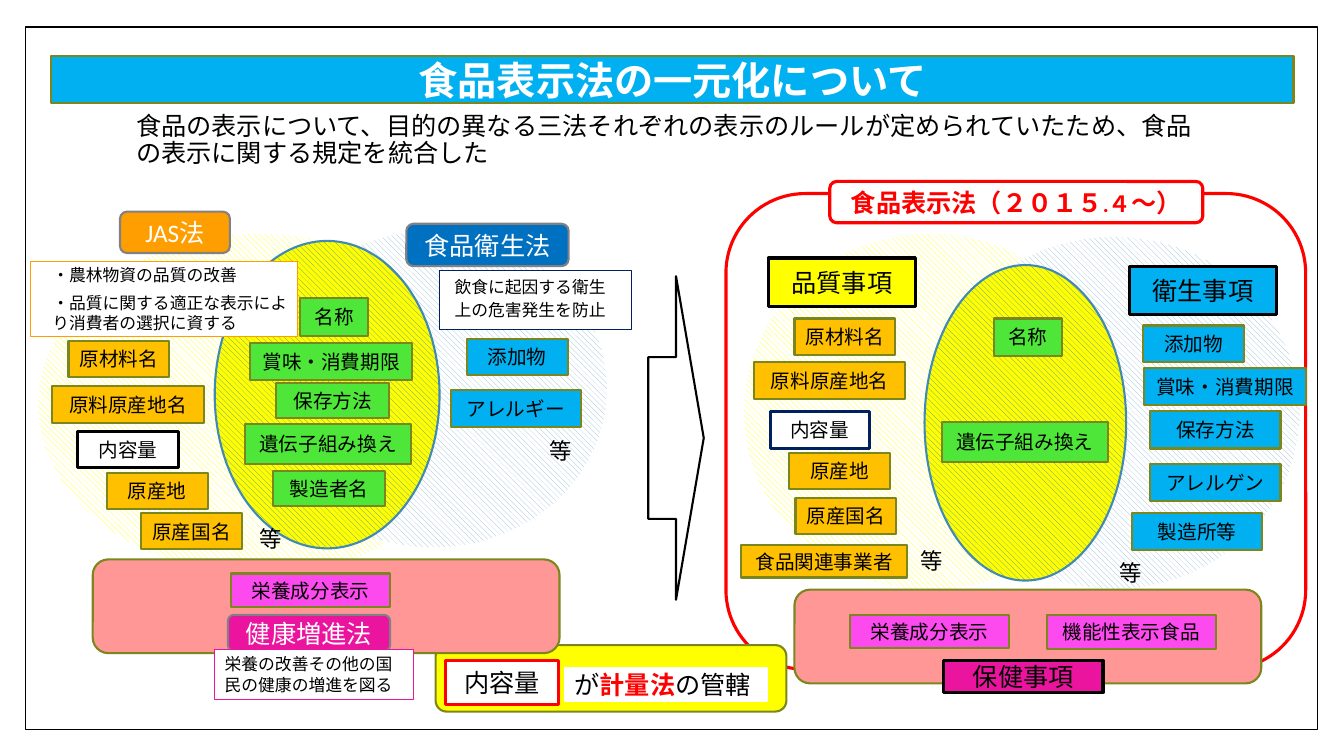
from dataclasses import dataclass

from pptx import Presentation
from pptx.dml.color import RGBColor
from pptx.enum.dml import MSO_PATTERN
from pptx.enum.shapes import MSO_SHAPE as Kind
from pptx.enum.text import MSO_ANCHOR as Anchor, MSO_AUTO_SIZE as AutoSize, PP_ALIGN as Align
from pptx.util import Emu, Pt

PX = 9144


@dataclass(frozen=True)
class Theme:
    font: str = "Calibri"
    white: str = "FFFFFF"
    black: str = "000000"
    red: str = "FF0000"
    yellow: str = "FFFF00"
    sky: str = "00B0F0"
    blue: str = "0070C0"
    navy: str = "002060"
    orange: str = "FE9E00"
    amber: str = "FFC000"
    green: str = "4EE739"
    pink: str = "FC4AEF"
    magenta: str = "EA149E"
    salmon: str = "FF9797"
    olive: str = "7B871D"
    gray: str = "818183"
    teal: str = "418AB3"
    pale_blue: str = "8ABAD4"
    banner_size: int = 28
    heading_size: int = 18
    etc_size: int = 16
    item_size: int = 14
    note_size: int = 12


THEME = Theme()


def color(value):
    return RGBColor.from_string(value)


def place(box):
    return [Emu(length * PX) for length in box]


def style_font(font, size, text_color, bold=False):
    font.name = THEME.font
    font.size = Pt(size)
    font.color.rgb = color(text_color)
    font.bold = bold


def add_box(slide, box, fill=None, line=None, width=1.5, kind=Kind.RECTANGLE):
    shape = slide.shapes.add_shape(kind, *place(box))
    shape.shadow.inherit = False
    if fill:
        shape.fill.solid()
        shape.fill.fore_color.rgb = color(fill)
    else:
        shape.fill.background()
    if line:
        shape.line.color.rgb = color(line)
        shape.line.width = Pt(width)
    else:
        shape.line.fill.background()
    return shape


def add_panel(slide, box, fill, line=THEME.olive, width=1.5):
    return add_box(slide, box, fill, line, width, Kind.ROUNDED_RECTANGLE)


def add_hatched_ellipse(slide, box, stripe, ground=THEME.white, line=None):
    shape = add_box(slide, box, line=line, kind=Kind.OVAL)
    shape.fill.patterned()
    shape.fill.pattern = MSO_PATTERN.WIDE_DOWNWARD_DIAGONAL
    shape.fill.fore_color.rgb = color(stripe)
    shape.fill.back_color.rgb = color(ground)


def write(shape, text, size, text_color=THEME.black, bold=False, align=Align.CENTER):
    frame = shape.text_frame
    frame.word_wrap = True
    frame.vertical_anchor = Anchor.MIDDLE
    paragraph = frame.paragraphs[0]
    paragraph.text = text
    paragraph.alignment = align
    style_font(paragraph.font, size, text_color, bold)
    return paragraph


def write_runs(shape, runs, align=Align.CENTER):
    paragraph = write(shape, "", THEME.heading_size, align=align)
    for text, size, text_color, bold in runs:
        run = paragraph.add_run()
        run.text = text
        style_font(run.font, size, text_color, bold)


def add_law(slide, text, box, fill):
    write(add_panel(slide, box, fill, THEME.gray), text, THEME.heading_size, THEME.white)


def add_category(slide, text, box, fill, line=THEME.black):
    write(add_box(slide, box, fill, line, 2.25), text, THEME.heading_size)


def add_items(slide, fill, items, line=THEME.olive, width=1.5):
    for text, *box in items:
        write(add_box(slide, box, fill, line, width), text, THEME.item_size)


def add_note(slide, lines, box, line, anchor=Anchor.TOP, indent=0, before=0, spacing=1.0):
    shape = add_box(slide, box, THEME.white, line, 0.75)
    frame = shape.text_frame
    for index, text in enumerate(lines):
        if index:
            paragraph = frame.add_paragraph()
            paragraph.text = text
            paragraph.alignment = Align.LEFT
            style_font(paragraph.font, THEME.note_size, THEME.black)
        else:
            paragraph = write(shape, text, THEME.note_size, align=Align.LEFT)
        paragraph.space_before = Pt(before)
        paragraph.line_spacing = spacing
        paragraph._p.get_or_add_pPr().set("marL", str(indent * PX))
    frame.vertical_anchor = anchor


def add_etc(slide, left, top):
    write(slide.shapes.add_textbox(*place((left, top, 33, 53))), "等", THEME.etc_size)


def add_title(slide):
    title = slide.shapes.title
    title.left, title.top, title.width, title.height = place((125, 107, 1080, 65))
    text = "食品の表示について、目的の異なる三法それぞれの表示のルールが定められていたため、食品の表示に関する規定を統合した"
    write(title, text, THEME.heading_size, align=Align.LEFT).line_spacing = 0.9
    title.text_frame.auto_size = AutoSize.NONE
    slide.shapes.element.append(title.element)


def add_three_laws(slide):
    add_hatched_ellipse(slide, (38, 232, 439, 338), THEME.yellow)
    add_hatched_ellipse(slide, (258, 229, 344, 314), THEME.pale_blue)
    add_hatched_ellipse(slide, (213, 239, 223, 305), THEME.teal, THEME.yellow, THEME.teal)
    add_panel(slide, (432, 640, 348, 66), THEME.yellow)
    add_panel(slide, (92, 555, 463, 93), THEME.salmon)
    add_note(slide, ["飲食に起因する衛生上の危害発生を防止"], (436, 268, 190, 59),
             THEME.navy, indent=5, spacing=1.1)
    add_note(slide, ["・農林物資の品質の改善", "・品質に関する適正な表示により消費者の選択に資する"],
             (30, 259, 265, 75), THEME.orange, Anchor.MIDDLE, indent=12, before=6)
    add_law(slide, "食品衛生法", (403, 222, 161, 42), THEME.blue)
    add_law(slide, "JAS法", (119, 210, 109, 41), THEME.orange)
    add_law(slide, "健康増進法", (226, 610, 161, 36), THEME.magenta)
    add_note(slide, ["栄養の改善その他の国民の健康の増進を図る"], (213, 644, 197, 50), THEME.magenta)
    add_items(slide, THEME.amber, [
        ("原材料名", 68, 338, 100, 36), ("原料原産地名", 52, 383, 150, 37),
        ("原産地", 106, 469, 100, 36), ("原産国名", 140, 509, 100, 36)])
    add_items(slide, THEME.white, [("内容量", 77, 428, 100, 36)], THEME.black, 2.25)
    add_items(slide, THEME.sky, [
        ("添加物", 463, 336, 100, 36), ("アレルギー", 447, 387, 129, 37)])
    add_items(slide, THEME.green, [
        ("名称", 298, 296, 67, 37), ("賞味・消費期限", 248, 340, 161, 37),
        ("保存方法", 274, 380, 112, 35), ("遺伝子組み換え", 243, 421, 165, 39),
        ("製造者名", 271, 467, 111, 35)])
    add_items(slide, THEME.pink, [("栄養成分表示", 229, 569, 158, 33)])
    add_etc(slide, 248, 508)
    add_etc(slide, 535, 421)


def add_unified_law(slide):
    add_hatched_ellipse(slide, (738, 232, 369, 353), THEME.yellow)
    add_hatched_ellipse(slide, (921, 235, 368, 349), THEME.pale_blue)
    add_hatched_ellipse(slide, (917, 263, 200, 313), THEME.teal, THEME.yellow, THEME.teal)
    add_panel(slide, (788, 585, 463, 93), THEME.salmon)
    label = add_panel(slide, (823, 180, 370, 41), THEME.white, THEME.red, 2.25)
    write_runs(label, [
        ("食品表示法（２０１５", THEME.heading_size, THEME.red, True),
        (".４", THEME.etc_size, THEME.red, True),
        ("～）", THEME.heading_size, THEME.red, True)])
    add_category(slide, "品質事項", (762, 256, 146, 48), THEME.yellow)
    add_category(slide, "衛生事項", (1120, 264, 146, 48), THEME.sky)
    add_category(slide, "保健事項", (936, 655, 158, 32), THEME.magenta)
    add_items(slide, THEME.green, [
        ("名称", 986, 316, 67, 37), ("遺伝子組み換え", 934, 419, 165, 39)])
    add_items(slide, THEME.pink, [
        ("栄養成分表示", 843, 610, 158, 33), ("機能性表示食品", 1038, 610, 168, 34)])
    add_items(slide, THEME.sky, [
        ("添加物", 1134, 323, 100, 36), ("賞味・消費期限", 1135, 365, 160, 37),
        ("保存方法", 1141, 408, 129, 37), ("アレルゲン", 1141, 460, 129, 37),
        ("製造所等", 1123, 509, 129, 37)])
    add_items(slide, THEME.amber, [
        ("原材料名", 788, 316, 100, 36), ("原料原産地名", 748, 359, 150, 37),
        ("原産地", 783, 449, 100, 36), ("原産国名", 789, 494, 100, 36),
        ("食品関連事業者", 735, 541, 165, 32)])
    add_items(slide, THEME.white, [("内容量", 764, 408, 98, 37)], THEME.navy, 2.25)
    add_etc(slide, 1101, 542)
    add_etc(slide, 903, 530)


def add_measurement_law(slide):
    add_category(slide, "内容量", (442, 655, 112, 44), THEME.white, THEME.red)
    remark = add_box(slide, (560, 663, 201, 32), THEME.white, THEME.white)
    write_runs(remark, [
        ("が", THEME.heading_size, THEME.black, False),
        ("計量法", THEME.heading_size, THEME.red, True),
        ("の管轄", THEME.heading_size, THEME.black, False)], Align.LEFT)


def main():
    presentation = Presentation()
    presentation.slide_width, presentation.slide_height = place((1333, 750))
    slide = presentation.slides.add_slide(presentation.slide_layouts[5])
    add_box(slide, (25, 27, 1282, 697), THEME.white, THEME.black, 1)
    add_panel(slide, (720, 192, 575, 472), None, THEME.red, 2.25)
    add_title(slide)
    banner = add_box(slide, (51, 56, 1232, 46), THEME.sky, THEME.olive)
    write(banner, "食品表示法の一元化について", THEME.banner_size, THEME.white, True)
    add_three_laws(slide)
    add_box(slide, (643, 274, 55, 321), None, THEME.black, kind=Kind.RIGHT_ARROW)
    add_unified_law(slide)
    add_measurement_law(slide)
    presentation.save("out.pptx")


if __name__ == "__main__":
    main()
